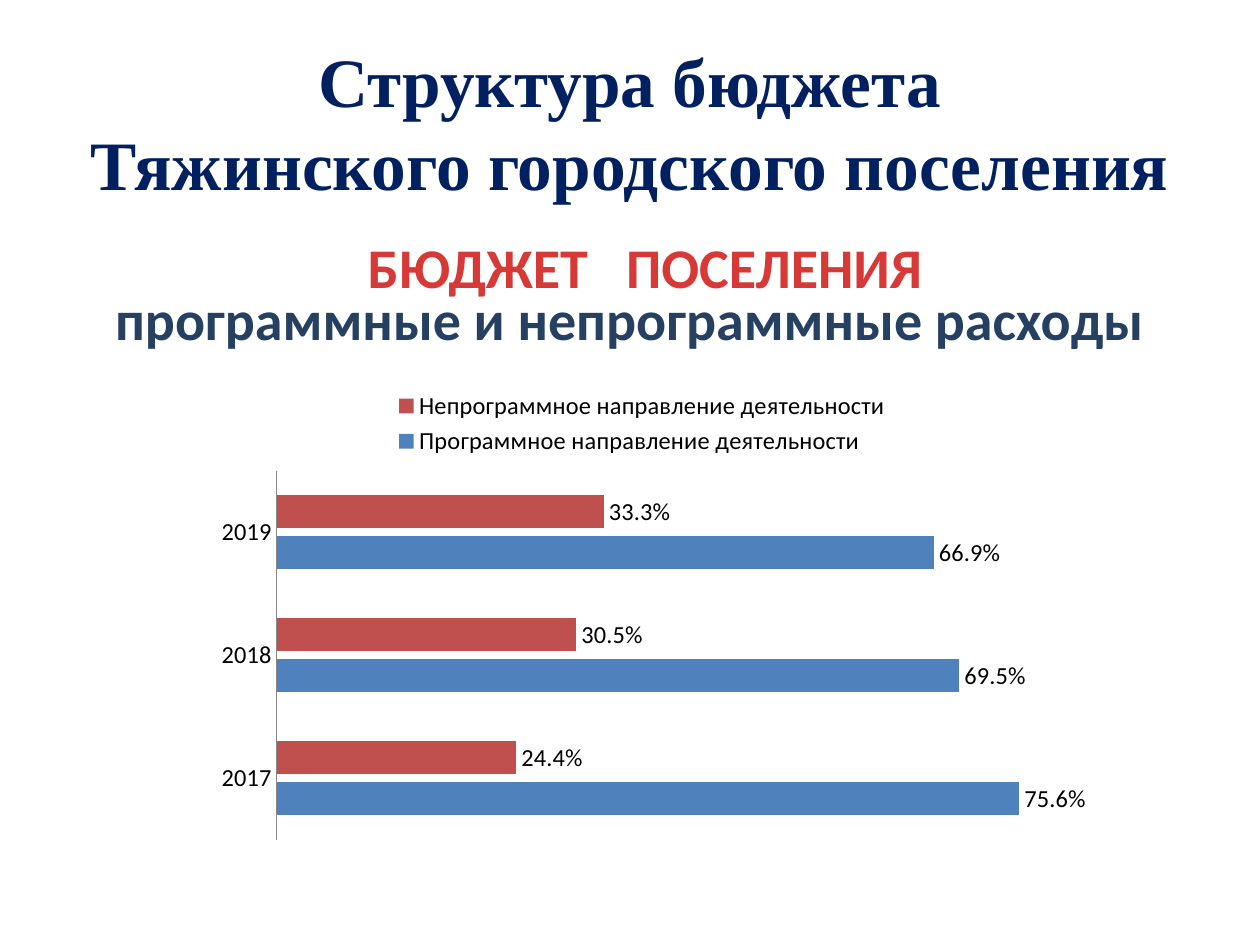
from lxml import etree
from pptx import Presentation
from pptx.chart.data import CategoryChartData
from pptx.dml.color import RGBColor
from pptx.enum.chart import XL_CHART_TYPE, XL_LABEL_POSITION, XL_LEGEND_POSITION, XL_TICK_MARK
from pptx.enum.text import MSO_ANCHOR, PP_ALIGN
from pptx.oxml.ns import qn
from pptx.util import Inches, Pt

CLUSTERED_BARS = XL_CHART_TYPE.BAR_CLUSTERED
OUTSIDE_END = XL_LABEL_POSITION.OUTSIDE_END
LEGEND_TOP = XL_LEGEND_POSITION.TOP
NO_TICKS = XL_TICK_MARK.NONE
MIDDLE, TOP = MSO_ANCHOR.MIDDLE, MSO_ANCHOR.TOP
CENTER = PP_ALIGN.CENTER

NAVY, RED, SLATE = "002060", "D73A36", "254061"
BLACK, GREY = "000000", "878787"
WORD_GAP = 14.5  # extra points after the space between the heading words


def color(hex_string):
    return RGBColor.from_string(hex_string)


class BudgetSlide:
    """Holds the style and the current slide."""

    body_font = "Calibri"
    title_font = "Times New Roman"

    def __init__(self, presentation):
        self.slide = presentation.slides.add_slide(presentation.slide_layouts[1])

    def place(self, shape, left, top, width, height):
        shape.left, shape.top = Inches(left), Inches(top)
        shape.width, shape.height = Inches(width), Inches(height)

    def format_text(self, text_frame, font_name, size, hex_string, anchor):
        text_frame.word_wrap = True
        text_frame.vertical_anchor = anchor
        for paragraph in text_frame.paragraphs:
            paragraph.alignment = CENTER
            paragraph.space_before = Pt(0)
            for run in paragraph.runs:
                run.font.name = font_name
                run.font.size = Pt(size)
                run.font.bold = True
                run.font.color.rgb = color(hex_string)

    def title(self, text, *box):
        shape = self.slide.shapes.title
        self.place(shape, *box)
        shape.text_frame.text = text
        self.format_text(shape.text_frame, self.title_font, 39.6, NAVY, MIDDLE)

    def body(self, text, *box):
        shape = self.slide.placeholders[1]
        self.place(shape, *box)
        shape.text_frame.text = text
        properties = shape.text_frame.paragraphs[0]._p.get_or_add_pPr()
        properties.set("marL", "0")
        properties.set("indent", "0")
        etree.SubElement(properties, qn("a:buNone"))
        self.format_text(shape.text_frame, self.body_font, 32, SLATE, TOP)

    def heading(self, words, *box):
        shape = self.slide.shapes.add_textbox(*map(Inches, box))
        paragraph = shape.text_frame.paragraphs[0]
        first, gap, last = (paragraph.add_run() for _ in range(3))
        first.text, last.text = words
        gap.text = " "
        gap.font._element.set("spc", str(int(WORD_GAP * 100)))
        self.format_text(shape.text_frame, self.body_font, 32, RED, TOP)

    def bar_chart(self, categories, series_rows, *box):
        data = CategoryChartData(number_format="0.0%")
        data.categories = categories
        for name, values, _ in series_rows:
            data.add_series(name, values)
        chart = self.slide.shapes.add_chart(CLUSTERED_BARS, *map(Inches, box), data).chart
        chart.has_title = False
        chart.font.name = self.body_font
        chart.font.size = Pt(14)
        chart.font.color.rgb = color(BLACK)

        # Legend
        chart.has_legend = True
        chart.legend.position = LEGEND_TOP
        chart.legend.include_in_layout = False

        # Axes
        chart.category_axis.major_tick_mark = NO_TICKS
        chart.category_axis.format.line.color.rgb = color(GREY)
        chart.value_axis.has_major_gridlines = False
        chart.value_axis.minimum_scale = 0
        chart.value_axis.visible = False

        # Bars and their labels
        plot = chart.plots[0]
        plot.vary_by_categories = False
        plot.gap_width = 150
        plot.overlap = -25
        for series, (_, _, hex_string) in zip(plot.series, series_rows):
            series.format.fill.solid()
            series.format.fill.fore_color.rgb = color(hex_string)
            labels = series.data_labels
            labels.show_value = True
            labels.number_format = "0.0%"
            labels.number_format_is_linked = False
            labels.position = OUTSIDE_END


def main():
    presentation = Presentation()
    presentation.slide_width, presentation.slide_height = Inches(10), Inches(7.5)
    page = BudgetSlide(presentation)

    # Headings
    page.title("Структура бюджета\nТяжинского городского поселения", 0.5, 0.3, 9, 1.32)
    page.body("программные и непрограммные расходы", 0.5, 2.21, 9, 4.49)
    page.heading(("БЮДЖЕТ", "ПОСЕЛЕНИЯ"), 1.3, 1.8, 7.64, 0.64)

    # Shares of spending by year
    page.bar_chart(
        ("2017", "2018", "2019"),
        (
            ("Программное направление деятельности", (0.756, 0.695, 0.669), "4F81BD"),
            ("Непрограммное направление деятельности", (0.244, 0.305, 0.333), "C0504D"),
        ),
        1.62, 2.99, 7, 3.75,
    )
    presentation.save("out.pptx")


if __name__ == "__main__":
    main()
